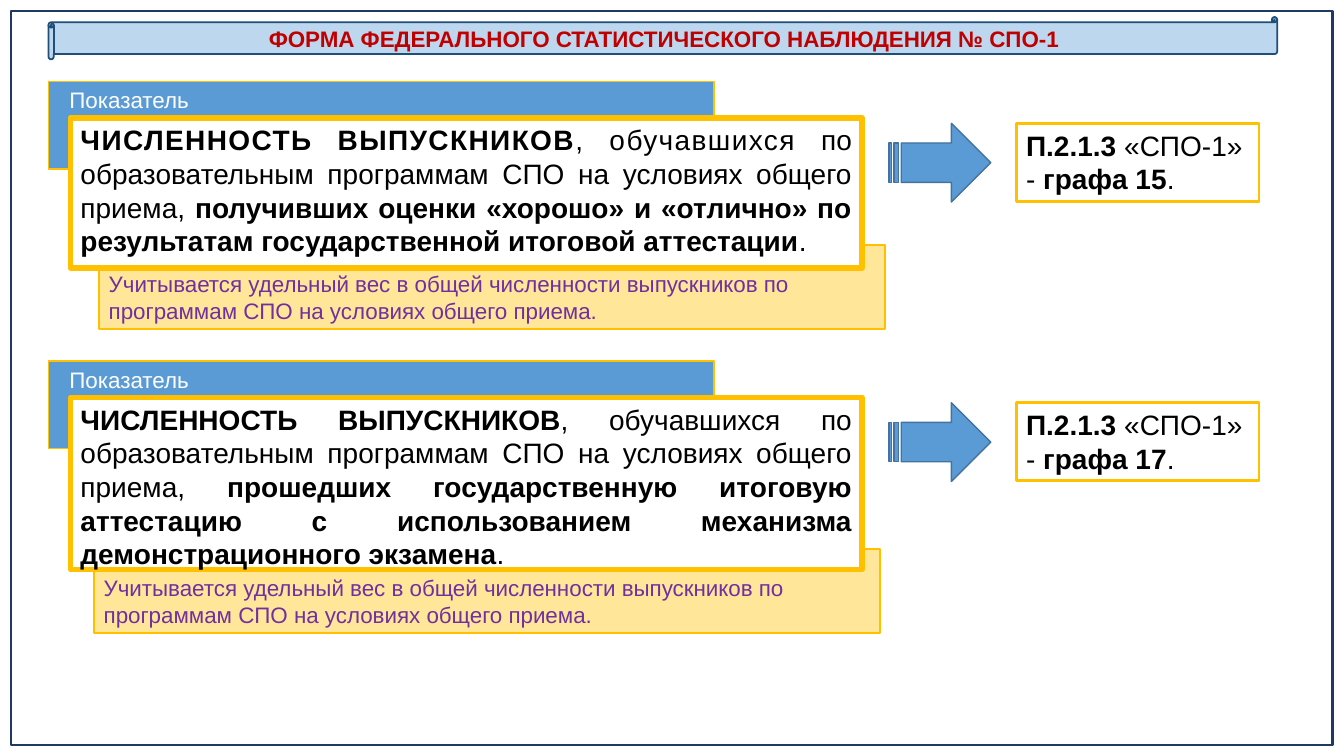
from pptx import Presentation
from pptx.dml.color import RGBColor
from pptx.enum.shapes import MSO_SHAPE
from pptx.enum.text import MSO_ANCHOR, PP_ALIGN
from pptx.util import Pt

COLORS = {
    "navy": "203864", "pale_blue": "BDD7EE", "dark_blue": "1F4E79",
    "blue": "5B9BD5", "arrow_line": "43739E", "gold": "FFC000",
    "cream": "FFE699", "white": "FFFFFF", "black": "000000",
    "red": "C00000", "purple": "7030A0",
}
NOTE = ("Учитывается удельный вес в общей численности выпускников "
        "по программам СПО на условиях общего приема.")
GRADUATES = "ЧИСЛЕННОСТЬ ВЫПУСКНИКОВ"
INDICATORS = [
    {"top": 58.3, "height": 107.3, "note": (70.6, 175), "column": "графа 15",
     "runs": [(GRADUATES, True, 1), (", обучавшихся ", False, 1),
              ("по образовательным программам СПО на условиях общего приема, ", False),
              ("получивших оценки «хорошо» и «отлично» по результатам "
               "государственной итоговой аттестации", True),
              (".", False)]},
    {"top": 257.9, "height": 123.1, "note": (67, 392.4), "column": "графа 17",
     "runs": [(GRADUATES, True),
              (", обучавшихся по образовательным программам СПО "
               "на условиях общего приема, ", False),
              ("прошедших государственную итоговую аттестацию с использованием "
               "механизма демонстрационного экзамена", True),
              (".", False)]},
]


def rgb(name):
    """Return the named colour."""
    return RGBColor.from_string(COLORS[name])


def add_box(slide, box, fill, line, width, kind=MSO_SHAPE.RECTANGLE):
    """Add a preset shape with the given fill and outline."""
    sp = slide.shapes.add_shape(kind, *[Pt(v) for v in box])
    sp.shadow.inherit = False
    if fill:
        sp.fill.solid()
        sp.fill.fore_color.rgb = rgb(fill)
    else:
        sp.fill.background()
    sp.line.color.rgb = rgb(line)
    sp.line.width = Pt(width)
    return sp


def write(sp, runs, size, color, align=PP_ALIGN.LEFT, anchor=MSO_ANCHOR.TOP):
    """Write one paragraph of (text, bold, optional spacing) runs."""
    tf = sp.text_frame
    tf.word_wrap = True
    tf.vertical_anchor = anchor
    p = tf.paragraphs[0]
    p.alignment = align
    for text, bold, *spacing in runs:
        r = p.add_run()
        r.text = text
        r.font.name = "Arial"
        r.font.size = Pt(size)
        r.font.bold = bold
        r.font.color.rgb = rgb(color)
        if spacing:
            r._r.get_or_add_rPr().set("spc", str(spacing[0] * 100))


def add_title(slide):
    """Add the scroll banner with the form name."""
    sp = add_box(slide, (34.6, 12.2, 877.7, 30.2), "pale_blue", "dark_blue",
                 1.25, MSO_SHAPE.HORIZONTAL_SCROLL)
    write(sp, [("ФОРМА ФЕДЕРАЛЬНОГО СТАТИСТИЧЕСКОГО НАБЛЮДЕНИЯ № СПО-1", True)],
          16, "red", PP_ALIGN.CENTER, MSO_ANCHOR.MIDDLE)


def add_indicator(slide, top, height, note, column, runs):
    """Add an indicator with its note, arrow and form reference."""
    sp = add_box(slide, (*note, 561.6, 59.8), "cream", "gold", 1.25)
    write(sp, [(NOTE, False)], 16, "purple", anchor=MSO_ANCHOR.BOTTOM)

    sp = add_box(slide, (34.6, top, 475.2, 62.6), "blue", "gold", 1.25)
    sp.text_frame.margin_left = Pt(15)
    write(sp, [("Показатель", False)], 16, "white")

    sp = add_box(slide, (50.4, top + 25.9, 565.2, height), "white", "gold", 4)
    write(sp, runs, 20, "black", PP_ALIGN.JUSTIFY)

    sp = add_box(slide, (725.8, top + 29.8, 173.5, 55.7), None, "gold", 2)
    write(sp, [("П.2.1.3 ", True), ("«СПО-1» - ", False), (column, True),
               (".", False)], 20, "black")

    add_box(slide, (635, top + 29.8, 72.7, 56.2), "blue", "arrow_line", 1,
            MSO_SHAPE.STRIPED_RIGHT_ARROW)


def main():
    """Build the slide and save it."""
    prs = Presentation()
    prs.slide_width, prs.slide_height = Pt(960), Pt(540)
    slide = prs.slides.add_slide(prs.slide_layouts[6])
    add_box(slide, (7.9, 7.9, 943.9, 524.2), None, "navy", 1.5)
    add_title(slide)
    for indicator in INDICATORS:
        add_indicator(slide, **indicator)
    prs.save("out.pptx")


if __name__ == "__main__":
    main()
